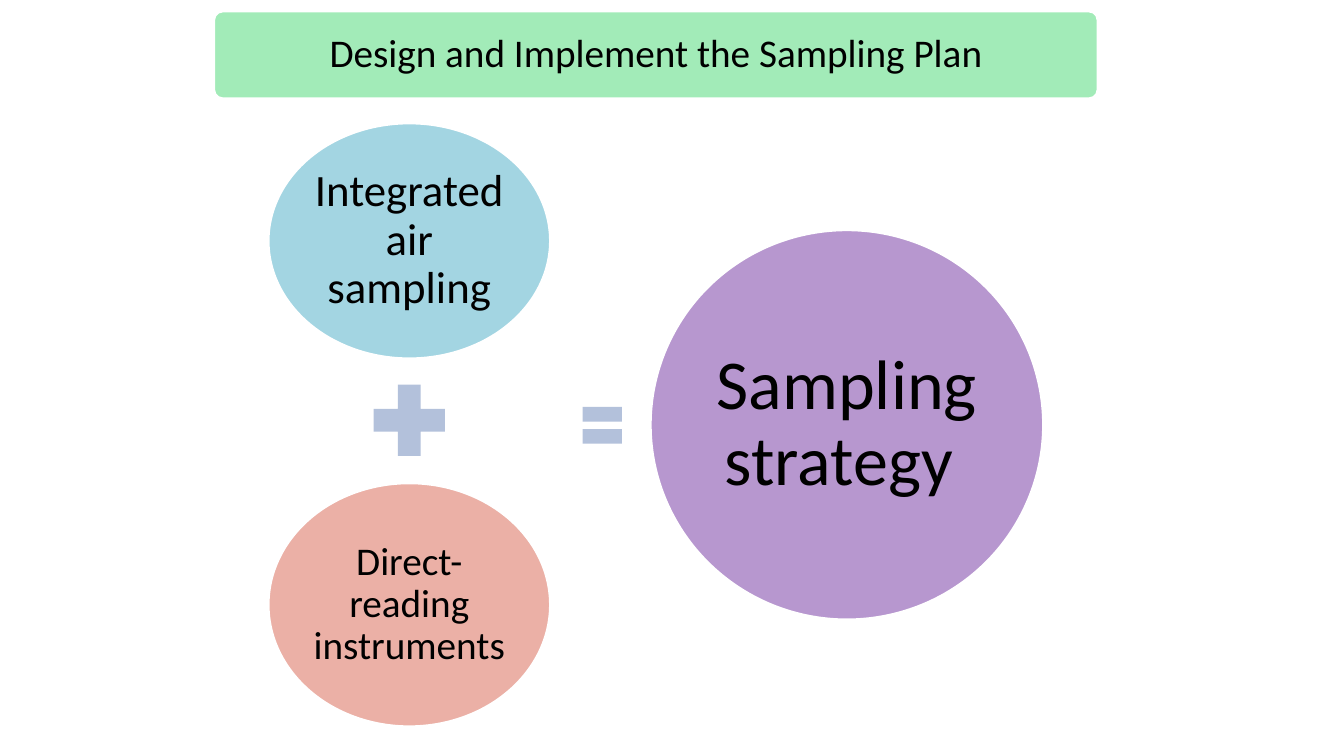
from dataclasses import dataclass

import lxml.etree
import pptx
import pptx.dml.color
import pptx.enum.shapes
import pptx.enum.text
import pptx.oxml.ns
import pptx.util

Inches = pptx.util.Inches
Shape = pptx.enum.shapes.MSO_SHAPE

COLOURS = {
    "title": "47D872",
    "air": "48ACC6",
    "instruments": "D9634F",
    "strategy": "7030A0",
    "operator": "B3C1DB",
    "outline": "FFFFFF",
    "text": "000000",
}


@dataclass
class Panel:
    kind: Shape
    left: float
    top: float
    width: float
    height: float
    colour: str
    text: str
    size: int
    inset: float


@dataclass
class Operator:
    kind: Shape
    left: float
    top: float
    width: float
    height: float


PANELS = [
    Panel(Shape.OVAL, 2.66, 1.22, 2.8, 2.34, "air", "Integrated air sampling", 32, 0.04),
    Panel(Shape.OVAL, 2.66, 4.79, 2.8, 2.42, "instruments", "Direct-reading instruments", 28, 0.04),
    Panel(Shape.OVAL, 6.45, 2.28, 3.9, 3.87, "strategy", "Sampling strategy ", 50, 0.07),
    Panel(Shape.ROUNDED_RECTANGLE, 2.12, 0.11, 8.77, 0.87, "title",
          "Design and Implement the Sampling Plan", 28, 0.13),
]

OPERATORS = [
    Operator(Shape.MATH_PLUS, 3.58, 3.69, 0.96, 0.96),
    Operator(Shape.MATH_EQUAL, 5.71, 3.91, 0.53, 0.62),
]


def colour(name: str) -> pptx.dml.color.RGBColor:
    return pptx.dml.color.RGBColor.from_string(COLOURS[name])


def add_filled(page: pptx.slide.Slide, item: Panel | Operator, fill: str) -> pptx.shapes.autoshape.Shape:
    shape = page.shapes.add_shape(
        item.kind, Inches(item.left), Inches(item.top), Inches(item.width), Inches(item.height))
    shape.shadow.inherit = False
    shape.fill.solid()
    shape.fill.fore_color.rgb = colour(fill)
    return shape


def make_half_transparent(shape: pptx.shapes.autoshape.Shape) -> None:
    tag = pptx.oxml.ns.qn
    fill = shape.fill._xPr.find(tag("a:solidFill"))
    lxml.etree.SubElement(fill.find(tag("a:srgbClr")), tag("a:alpha"), val="50000")


def draw_panel(page: pptx.slide.Slide, panel: Panel) -> None:
    shape = add_filled(page, panel, panel.colour)
    make_half_transparent(shape)
    shape.line.color.rgb = colour("outline")
    shape.line.width = pptx.util.Pt(2)
    if panel.kind == Shape.ROUNDED_RECTANGLE:
        shape.adjustments[0] = 0.1
    box = shape.text_frame
    box.word_wrap = True
    box.vertical_anchor = pptx.enum.text.MSO_ANCHOR.MIDDLE
    box.margin_left = box.margin_right = Inches(panel.inset)
    box.margin_top = box.margin_bottom = Inches(panel.inset)
    para = box.paragraphs[0]
    para.alignment = pptx.enum.text.PP_ALIGN.CENTER
    para.line_spacing = 0.9
    span = para.add_run()
    span.text = panel.text
    span.font.name = "Calibri"
    span.font.size = pptx.util.Pt(panel.size)
    span.font.color.rgb = colour("text")


def draw_operator(page: pptx.slide.Slide, operator: Operator) -> None:
    add_filled(page, operator, "operator").line.fill.background()


def main() -> None:
    deck = pptx.Presentation()
    deck.slide_width = Inches(13.33)
    deck.slide_height = Inches(7.5)
    page = deck.slides.add_slide(deck.slide_layouts[6])
    for panel in PANELS:
        draw_panel(page, panel)
    for operator in OPERATORS:
        draw_operator(page, operator)
    deck.save("out.pptx")


if __name__ == "__main__":
    main()
